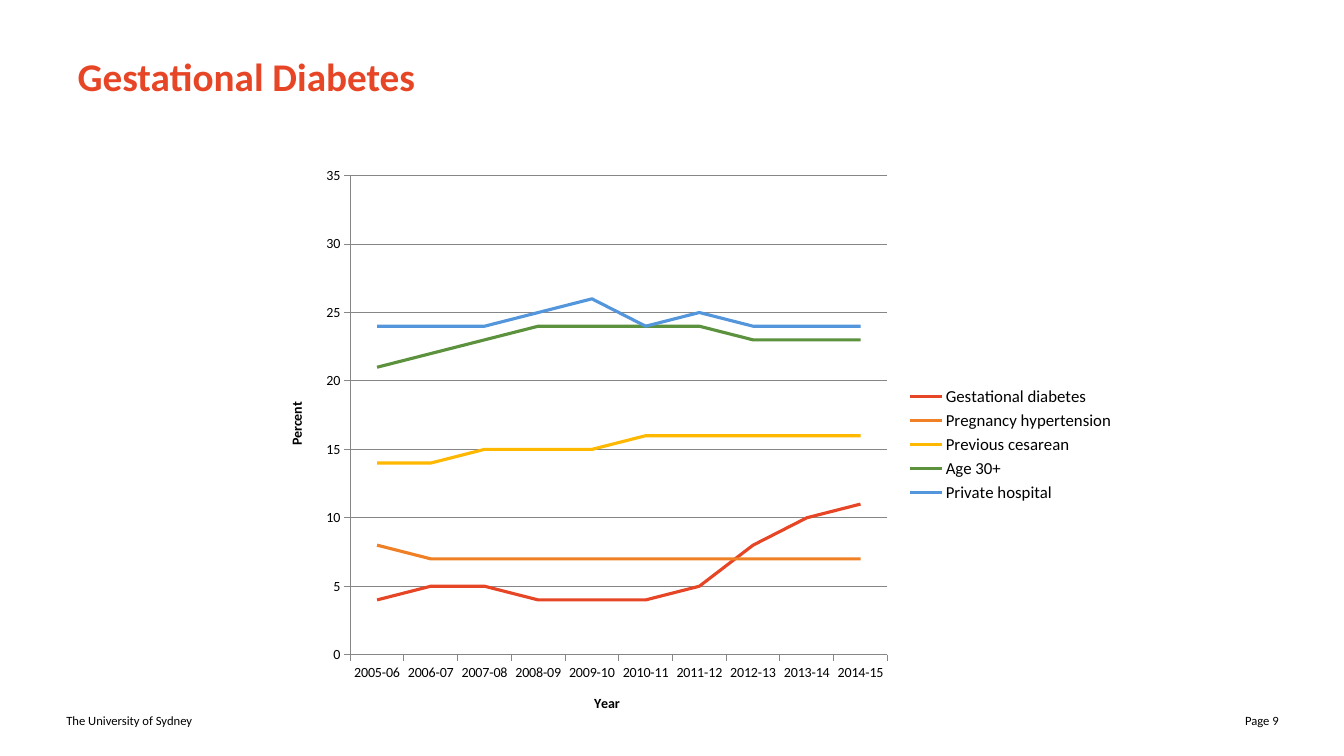
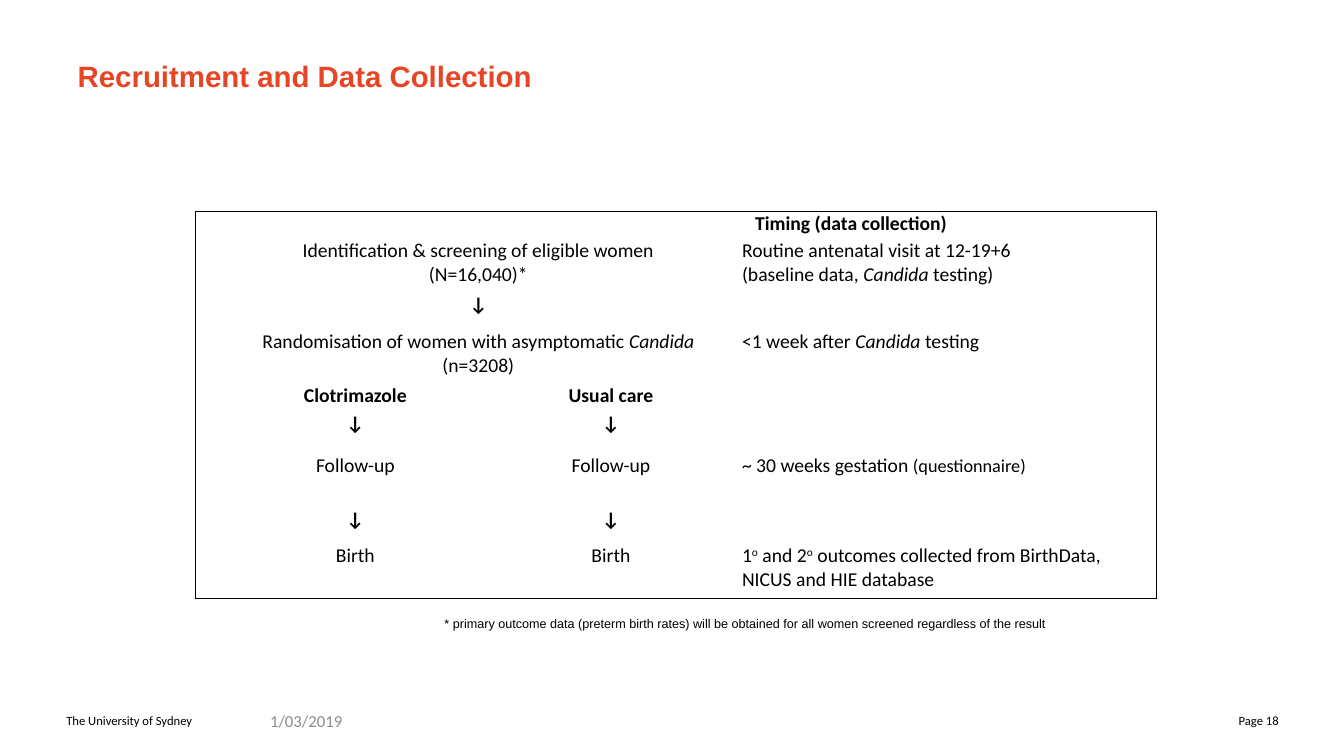
from lxml import etree
from pptx import Presentation
from pptx.chart.data import CategoryChartData
from pptx.dml.color import RGBColor
from pptx.enum.chart import XL_CHART_TYPE, XL_LEGEND_POSITION, XL_TICK_MARK
from pptx.enum.text import MSO_ANCHOR, MSO_AUTO_SIZE, PP_ALIGN
from pptx.oxml import parse_xml
from pptx.oxml.ns import nsdecls, qn
from pptx.util import Inches, Pt

# Shared look
HUES = {"title": "E64626", "text": "000000", "date": "8C8C8C", "grid": "868686",
        "red": "E64626", "orange": "EF8025", "yellow": "FFB800",
        "green": "5C923E", "blue": "5496DB"}
FONT = "Calibri"
PLAIN = "{2D5ABB26-0587-4C30-8999-92F81FD0307C}"  # table style without grid
LEFT, MID, RIGHT, FULL = (PP_ALIGN.LEFT, PP_ALIGN.CENTER, PP_ALIGN.RIGHT,
                          PP_ALIGN.JUSTIFY)

# Chart content
YEARS = [f"{y}-{y % 100 + 1:02d}" for y in range(2005, 2015)]
LINES = [
    ("Gestational diabetes", "red", (4, 5, 5, 4, 4, 4, 5, 8, 10, 11)),
    ("Pregnancy hypertension", "orange", (8, 7, 7, 7, 7, 7, 7, 7, 7, 7)),
    ("Previous cesarean", "yellow", (14, 14, 15, 15, 15, 16, 16, 16, 16, 16)),
    ("Age 30+", "green", (21, 22, 23, 24, 24, 24, 24, 23, 23, 23)),
    ("Private hospital", "blue", (24, 24, 24, 25, 26, 24, 25, 24, 24, 24)),
]

# Table content: (row, column) -> paragraphs, each a list of (text, style) runs
COLS = (0.27, 2.63, 2.44, 4.19)
ROWS = (0.27, 0.54, 0.36, 0.54, 0.69, 0.54, 0.36, 0.54)
SPANS = [((0, 0), (0, 2)), ((1, 1), (1, 2)), ((1, 3), (2, 3)),
         ((2, 1), (2, 2)), ((3, 1), (3, 2))]
ARROW = [("↓", "bold")]
CELLS = {
    (0, 3): [[("Timing (data collection)", "bold")]],
    (1, 1): [[("Identification & screening of eligible women", "")],
             [("(N=16,040)*", "")]],
    (1, 3): [[("Routine antenatal visit at 12-19+6", "")],
             [("(baseline data, ", ""), ("Candida", "italic"), (" testing)", "")]],
    (2, 1): [ARROW],
    (3, 1): [[("Randomisation of women with asymptomatic ", ""),
              ("Candida", "italic"), (" (n=3208)", "")]],
    (3, 3): [[("<1 week after ", ""), ("Candida", "italic"), (" testing", "")]],
    (5, 3): [[("~ 30 weeks gestation ", ""), ("(questionnaire)", "small")]],
    (7, 3): [[("1", ""), ("o", "raised"), (" and 2", ""), ("o", "raised"),
              (" outcomes collected from BirthData, NICUS and HIE database", "")]],
}
for col, arm in ((1, "Clotrimazole"), (2, "Usual care")):
    CELLS.update({(4, col): [[(arm, "bold")], ARROW],
                  (5, col): [[("Follow-up", "")]],
                  (6, col): [ARROW],
                  (7, col): [[("Birth", "")]]})


def paint(font, size, hue="text", name=FONT, bold=None):
    font.size, font.name, font.bold = Pt(size), name, bold
    font.color.rgb = RGBColor.from_string(HUES[hue])


def add_text(slide, text, place, size, hue="text", name=FONT, align=LEFT):
    box = slide.shapes.add_textbox(*map(Inches, place))
    frame = box.text_frame
    frame.word_wrap = True
    frame.vertical_anchor = MSO_ANCHOR.MIDDLE
    para = frame.paragraphs[0]
    para.text, para.alignment = text, align
    paint(para.font, size, hue, name)
    return frame


def add_slide(deck, title, page, size, name=FONT):
    slide = deck.slides.add_slide(deck.slide_layouts[5])
    head = slide.shapes.title
    head.left, head.top, head.width, head.height = map(Inches, (0.67, 0.13, 12, 1.25))
    frame = head.text_frame
    frame.vertical_anchor = MSO_ANCHOR.MIDDLE
    para = frame.paragraphs[0]
    para.text, para.alignment = title, LEFT
    paint(para.font, size, "title", name, True)
    add_text(slide, "The University of Sydney", (0.56, 6.95, 3.11, 0.4), 9)
    add_text(slide, f"Page {page}", (9.67, 6.95, 3.11, 0.4), 9, align=RIGHT)
    return slide


def rule(line):
    line.color.rgb = RGBColor.from_string(HUES["grid"])
    line.width = Pt(0.75)


def add_graph(slide):
    data = CategoryChartData()
    data.categories = YEARS
    for name, _, vals in LINES:
        data.add_series(name, vals)
    place = map(Inches, (2.65, 1.55, 8.51, 5.72))
    chart = slide.shapes.add_chart(XL_CHART_TYPE.LINE, *place, data).chart
    paint(chart.font, 10)
    chart.has_title = False
    chart.has_legend = True
    chart.legend.position = XL_LEGEND_POSITION.RIGHT
    chart.legend.include_in_layout = False
    paint(chart.legend.font, 12)

    # Axes
    for axis, name in ((chart.category_axis, "Year"), (chart.value_axis, "Percent")):
        para = axis.axis_title.text_frame.paragraphs[0]
        para.text = name
        paint(para.font, 10, bold=True)
        axis.major_tick_mark = XL_TICK_MARK.OUTSIDE
        rule(axis.format.line)
    axis = chart.value_axis
    axis.minimum_scale, axis.maximum_scale, axis.major_unit = 0, 35, 5
    axis.tick_labels.number_format = "General"
    axis.tick_labels.number_format_is_linked = False
    rule(axis.major_gridlines.format.line)

    # Lines
    plot = chart.plots[0]
    plot.vary_by_categories = False
    for series, (_, hue, _) in zip(plot.series, LINES):
        series.smooth = False
        series.format.line.color.rgb = RGBColor.from_string(HUES[hue])
        series.format.line.width = Pt(2.25)


def add_edges(cell, sides):
    props = cell._tc.get_or_add_tcPr()
    for spot, side in enumerate(sides):
        props.insert(spot, parse_xml(
            f'<a:ln{side} {nsdecls("a")} w="12700"><a:solidFill>'
            f'<a:srgbClr val="{HUES["text"]}"/></a:solidFill></a:ln{side}>'))


def fill_cell(cell, paras, align):
    frame = cell.text_frame
    for num, runs in enumerate(paras):
        para = frame.add_paragraph() if num else frame.paragraphs[0]
        para.alignment = align
        bold = all(style == "bold" for _, style in runs)
        if bold and num + 1 < len(paras):
            para.space_after = Pt(3)
        paint(para.font, 14, bold=bold)
        for text, style in runs:
            run = para.add_run()
            run.text = text
            if style == "italic":
                run.font.italic = True
            elif style == "small":
                run.font.size = Pt(13)
            elif style == "raised":
                run._r.get_or_add_rPr().set("baseline", "30000")
    if not paras:
        para = frame.paragraphs[0]
        paint(para.font, 14)
        end = etree.SubElement(para._p, qn("a:endParaRPr"))
        end.set("sz", "1400")


def add_grid(slide):
    place = map(Inches, (1.94, 2.1, sum(COLS), sum(ROWS)))
    table = slide.shapes.add_table(len(ROWS), len(COLS), *place).table
    table.first_row = table.horz_banding = False
    table._tbl.tblPr.find(qn("a:tableStyleId")).text = PLAIN
    for col, wide in zip(table.columns, COLS):
        col.width = Inches(wide)
    for row, high in zip(table.rows, ROWS):
        row.height = Inches(high)
    for start, end in SPANS:
        table.cell(*start).merge(table.cell(*end))
    last_row, last_col = len(ROWS) - 1, len(COLS) - 1
    for r in range(len(ROWS)):
        for c in range(len(COLS)):
            cell = table.cell(r, c)
            cell.margin_left = cell.margin_right = Inches(0.08)
            cell.margin_top = cell.margin_bottom = 0
            cell.fill.background()
            fill_cell(cell, CELLS.get((r, c), []), LEFT if c == last_col else MID)
            outer = {"L": c == 0, "R": c == last_col, "T": r == 0, "B": r == last_row}
            add_edges(cell, [side for side, on in outer.items() if on])
    table.cell(0, last_col).margin_left = Inches(0.21)


def main():
    deck = Presentation()
    deck.slide_width, deck.slide_height = Inches(13.33), Inches(7.5)

    add_graph(add_slide(deck, "Gestational Diabetes", 9, 28))

    slide = add_slide(deck, "Recruitment and Data Collection", 18, 21, "Arial")
    add_text(slide, "1/03/2019", (2.58, 6.95, 3, 0.4), 12, "date")
    add_grid(slide)
    note = add_text(slide, "* primary outcome data (preterm birth rates) will be obtained "
                    "for all women screened regardless of the result",
                    (4.31, 6.06, 6.22, 0.25), 9, name="Arial", align=FULL)
    note.word_wrap = False
    note.auto_size = MSO_AUTO_SIZE.SHAPE_TO_FIT_TEXT

    deck.save("out.pptx")


if __name__ == "__main__":
    main()
